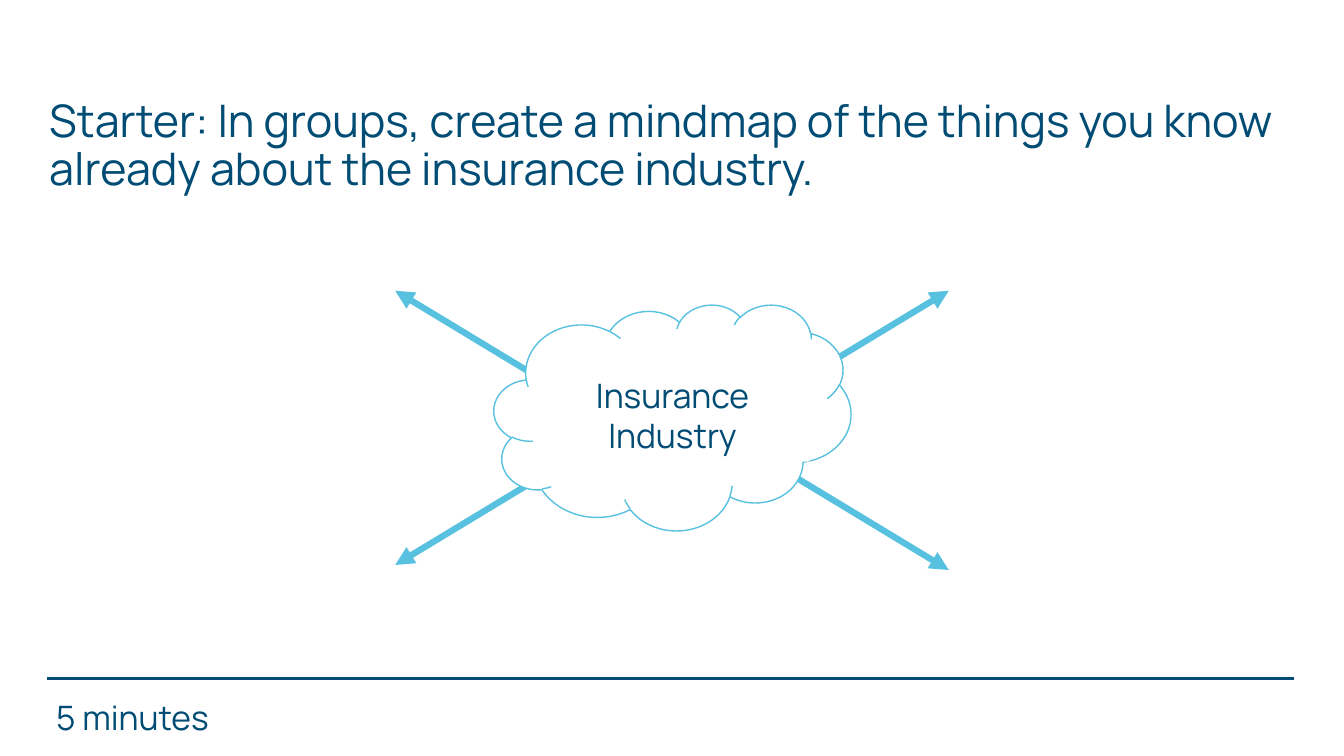
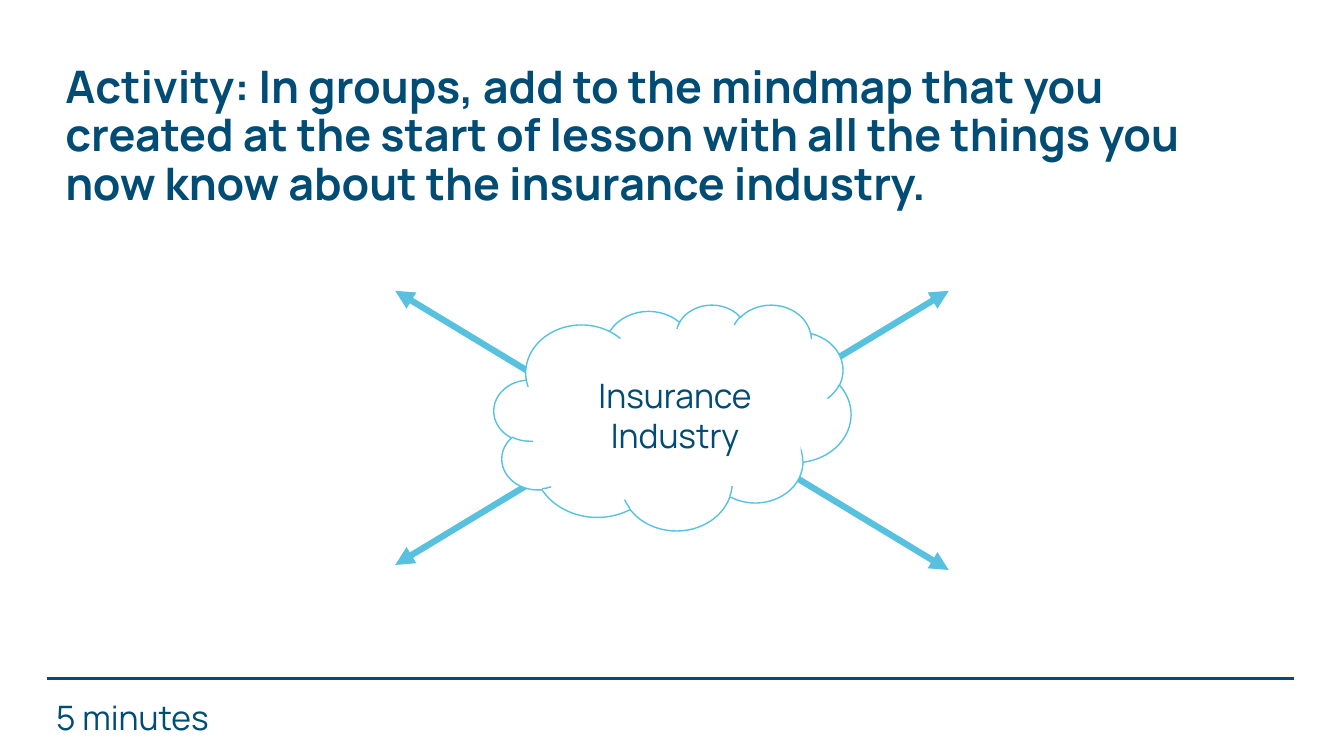
from pptx import Presentation
from pptx.dml.color import RGBColor
from pptx.enum.shapes import MSO_CONNECTOR as Connector, MSO_SHAPE as Shape
from pptx.enum.text import MSO_ANCHOR as Anchor, PP_ALIGN as Align
from pptx.oxml.ns import qn
from pptx.util import Inches, Pt
from lxml.etree import SubElement

# Content: title, its format and box, and the box of the mindmap label
SLIDES = [
    {
        "title": "Starter: In groups, create a mindmap of the things you know "
                 "already about the insurance industry.",
        "bold": False,
        "title_box": (0.39, 0.59, 12.37, 1.74),
        "label_box": (5.31, 3.67, 2.72, 0.91),
    },
    {
        "title": "Activity: In groups, add to the mindmap that you created at the "
                 "start of lesson with all the things you now know about the "
                 "insurance industry.",
        "bold": True,
        "title_box": (0.55, 0.49, 12.23, 1.74),
        "label_box": (5.45, 3.67, 2.49, 0.91),
    },
]
TOPIC = "Insurance Industry"
DURATION = "5 minutes"

# Shared style and geometry
FONT = "Manrope"
NAVY, SKY, WHITE = "014C74", "57C1DF", "FFFFFF"
CLOUD_BOX = (4.9, 3.02, 3.54, 2.24)
DURATION_BOX = (0.46, 6.86, 2.67, 0.5)
FOOTER_RULE = ((0.47, 6.73), (12.83, 6.73))
ARROW_RUN, ARROW_RISE = 1.71, 1.035
# Start of each arrow and its direction
ARROWS = [((5.63, 4.57), (-1, 1)), ((7.7, 3.92), (1, -1)),
          ((7.7, 4.62), (1, 1)), ((5.63, 3.92), (-1, -1))]


def color(value):
    return RGBColor.from_string(value)


def inches(values):
    return [Inches(value) for value in values]


def add_line(slide, start, end, line_color, width, arrow=False):
    line = slide.shapes.add_connector(Connector.STRAIGHT, *inches(start + end))
    line.line.color.rgb = color(line_color)
    line.line.width = Pt(width)
    if arrow:
        SubElement(line.line._get_or_add_ln(), qn("a:tailEnd"), type="triangle")
    SubElement(line._element.spPr, qn("a:effectLst"))


def add_panel(slide, preset, box, line_color=None):
    shape = slide.shapes.add_shape(preset, *inches(box))
    shape.shadow.inherit = False
    shape.fill.solid()
    shape.fill.fore_color.rgb = color(WHITE)
    if line_color:
        shape.line.color.rgb = color(line_color)
        shape.line.width = Pt(1)
    else:
        shape.line.fill.background()
    return shape


def set_text(shape, text, size=24, bold=False, align=Align.LEFT,
             anchor=Anchor.TOP, spacing=1.0):
    frame = shape.text_frame
    frame.word_wrap = True
    frame.vertical_anchor = anchor
    paragraph = frame.paragraphs[0]
    paragraph.text = text
    paragraph.alignment = align
    paragraph.line_spacing = spacing
    font = paragraph.runs[0].font
    font.name, font.size, font.bold = FONT, Pt(size), bold
    font.color.rgb = color(NAVY)


def add_mindmap(slide, label_box):
    for (x, y), (right, down) in ARROWS:
        end = (x + right * ARROW_RUN, y + down * ARROW_RISE)
        add_line(slide, (x, y), end, SKY, 4.5, arrow=True)
    add_panel(slide, Shape.CLOUD, CLOUD_BOX, SKY)
    label = add_panel(slide, Shape.RECTANGLE, label_box)
    set_text(label, TOPIC, align=Align.CENTER)


def build_slide(presentation, content):
    slide = presentation.slides.add_slide(presentation.slide_layouts[6])
    add_line(slide, *FOOTER_RULE, NAVY, 2.25)
    title = slide.shapes.add_textbox(*inches(content["title_box"]))
    set_text(title, content["title"], size=32, bold=content["bold"],
             anchor=Anchor.MIDDLE, spacing=0.9)
    add_mindmap(slide, content["label_box"])
    duration = slide.shapes.add_textbox(*inches(DURATION_BOX))
    set_text(duration, DURATION)


def main():
    presentation = Presentation()
    presentation.slide_width, presentation.slide_height = inches((13.33, 7.5))
    for content in SLIDES:
        build_slide(presentation, content)
    presentation.save("out.pptx")


if __name__ == "__main__":
    main()
